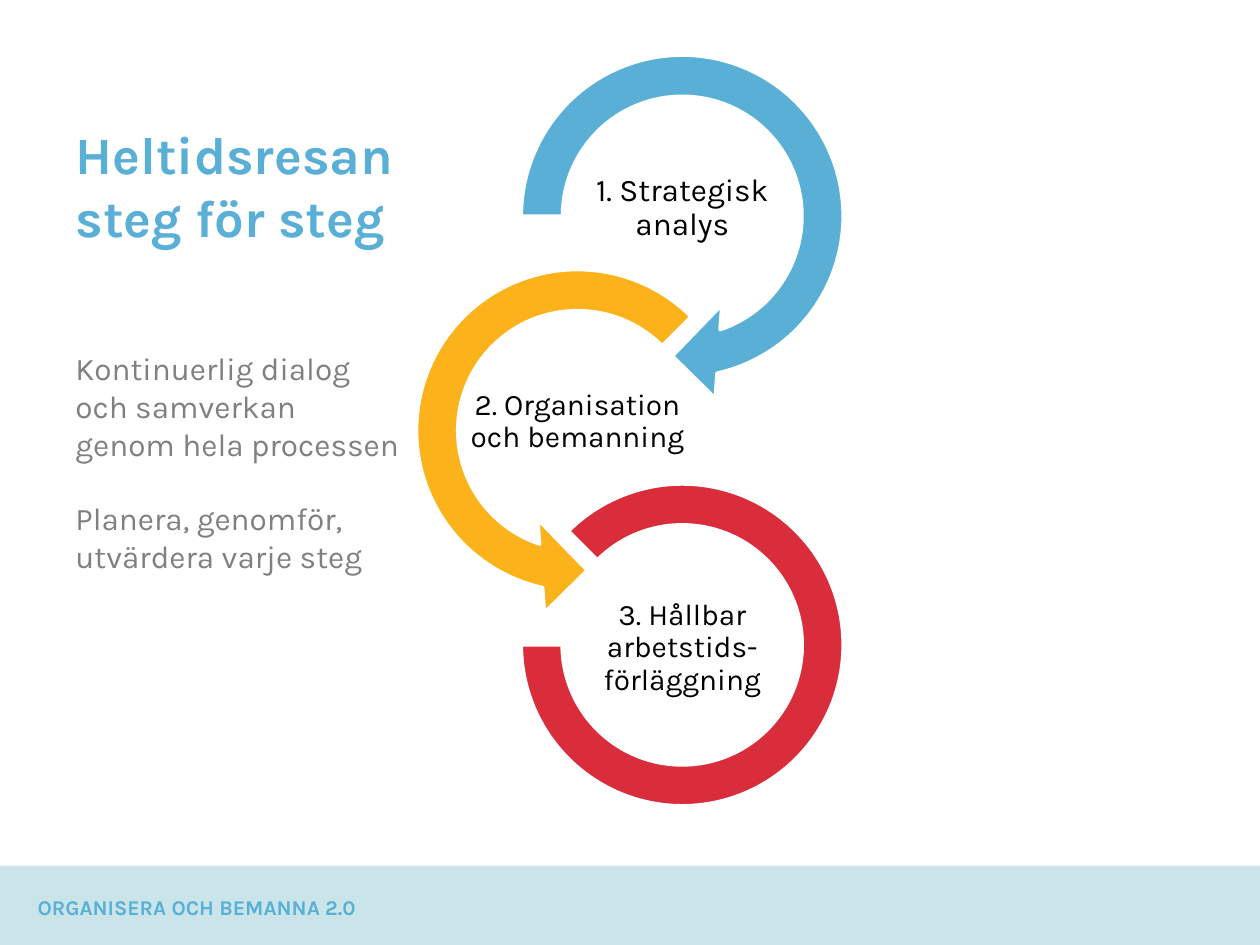
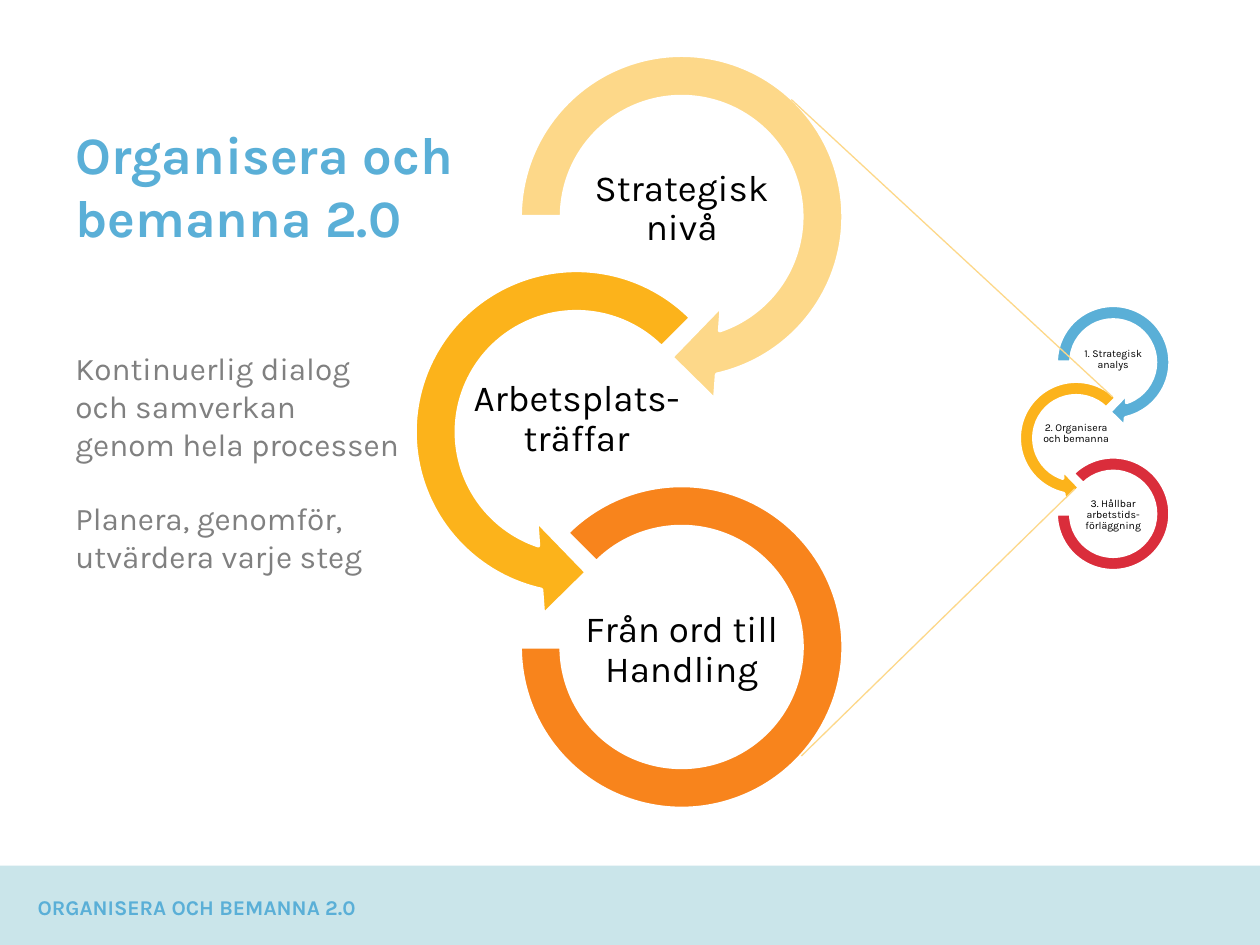
from dataclasses import dataclass

from lxml import etree
from pptx import Presentation
from pptx.dml.color import RGBColor
from pptx.enum.shapes import MSO_CONNECTOR, MSO_SHAPE
from pptx.enum.text import MSO_ANCHOR, PP_ALIGN
from pptx.oxml.ns import qn
from pptx.util import Inches, Pt

RECTANGLE = MSO_SHAPE.RECTANGLE
RIGHT_ARROW = MSO_SHAPE.CIRCULAR_ARROW
LEFT_ARROW = MSO_SHAPE.LEFT_CIRCULAR_ARROW
BLOCK_ARC = MSO_SHAPE.BLOCK_ARC
STRAIGHT = MSO_CONNECTOR.STRAIGHT
TOP, MIDDLE = MSO_ANCHOR.TOP, MSO_ANCHOR.MIDDLE
LEFT, CENTER = PP_ALIGN.LEFT, PP_ALIGN.CENTER

FONT = "Karla"
BLUE, YELLOW, RED = "5AAFD7", "FCB31B", "DA2D3B"
PALE_YELLOW, ORANGE = "FDD889", "F8841C"
PALE_BLUE, GREY, BLACK, WHITE = "CAE5EA", "808080", "000000", "FFFFFF"

FOOTER = "ORGANISERA OCH BEMANNA 2.0"
DIALOGUE = [
    "Kontinuerlig dialog och samverkan",
    "genom hela processen",
    "Planera, genomför, utvärdera varje steg",
]


@dataclass(frozen=True)
class Box:
    left: float
    top: float
    width: float
    height: float

    def lengths(self) -> tuple:
        return tuple(Inches(value) for value in (self.left, self.top, self.width, self.height))


@dataclass(frozen=True)
class TextStyle:
    size: float
    color: str
    bold: bool = False
    align: PP_ALIGN = LEFT
    anchor: MSO_ANCHOR = MIDDLE
    line_spacing: float = 1.0


@dataclass(frozen=True)
class Ring:
    shape: MSO_SHAPE
    adjustments: tuple
    across: float
    down: float
    size: float
    label_center: float
    label_top: float


@dataclass(frozen=True)
class Step:
    text: str
    color: str
    font_size: float
    label_width: float = 0.56
    label_shift: float = 0.0


@dataclass(frozen=True)
class Cycle:
    left: float
    top: float
    diameter: float
    steps: tuple


@dataclass(frozen=True)
class Ray:
    start: tuple
    end: tuple


RINGS = (
    Ring(RIGHT_ARROW, (0.11, 11.42, 45, 108, 0.125), 0, 0, 1, 0.5, 0.34),
    Ring(LEFT_ARROW, (0.11, 11.42, 63, 189, 0.125), -0.28, 0.573, 1, 0.22, 0.9),
    Ring(BLOCK_ARC, (135, 108, 0.127), 0.07, 1.216, 0.86, 0.5, 1.515),
)
LABEL_HEIGHT = 0.28
LABEL_INSET = 0.004

TITLE_STYLE = TextStyle(30, BLUE, bold=True)
FOOTER_STYLE = TextStyle(12, BLUE, bold=True)
BODY_STYLE = TextStyle(18, GREY, anchor=TOP)

JOURNEY = Cycle(3.93, 0.23, 2.97, (
    Step("1. Strategisk analys", BLUE, 18),
    Step("2. Organisation och bemanning", YELLOW, 17, label_width=0.63, label_shift=0.01),
    Step("3. Hållbar arbetstids-förläggning", RED, 17),
))
LEVELS = Cycle(3.92, 0.23, 2.98, (
    Step("Strategisk nivå", PALE_YELLOW, 21),
    Step("Arbetsplats-träffar", YELLOW, 21),
    Step("Från ord till Handling", ORANGE, 21),
))
OVERVIEW = Cycle(8.31, 2.35, 1.05, (
    Step("1. Strategisk analys", BLUE, 6),
    Step("2. Organisera och bemanna", YELLOW, 6),
    Step("3. Hållbar arbetstids-förläggning", RED, 6),
))
RAYS = (Ray((6.28, 0.79), (8.83, 3.15)), Ray((8.53, 3.88), (6.36, 6)))


def rgb(color: str) -> RGBColor:
    return RGBColor.from_string(color)


def add_filled_shape(slide, kind: MSO_SHAPE, box: Box, color: str):
    shape = slide.shapes.add_shape(kind, *box.lengths())
    shape.shadow.inherit = False
    shape.fill.solid()
    shape.fill.fore_color.rgb = rgb(color)
    shape.line.fill.background()
    return shape


def add_text(slide, box: Box, texts: list, style: TextStyle, inset: float | None = None):
    frame = slide.shapes.add_textbox(*box.lengths()).text_frame
    frame.word_wrap = True
    frame.vertical_anchor = style.anchor
    if inset is not None:
        frame.margin_left = frame.margin_right = Inches(inset)
        frame.margin_top = frame.margin_bottom = Inches(inset)
    for index, text in enumerate(texts):
        paragraph = frame.add_paragraph() if index else frame.paragraphs[0]
        paragraph.alignment = style.align
        paragraph.line_spacing = style.line_spacing
        run = paragraph.add_run()
        run.text = text
        run.font.name = FONT
        run.font.size = Pt(style.size)
        run.font.bold = style.bold
        run.font.color.rgb = rgb(style.color)
    return frame


def add_cycle(slide, cycle: Cycle) -> None:
    unit = cycle.diameter
    for ring, step in zip(RINGS, cycle.steps):
        ring_box = Box(cycle.left + ring.across * unit, cycle.top + ring.down * unit,
                       ring.size * unit, ring.size * unit)
        shape = add_filled_shape(slide, ring.shape, ring_box, step.color)
        for index, value in enumerate(ring.adjustments):
            shape.adjustments[index] = value
        shape.line.color.rgb = rgb(WHITE)
        shape.line.width = Pt(2)

        label_box = Box(cycle.left + (ring.label_center - step.label_width / 2) * unit,
                        cycle.top + (ring.label_top + step.label_shift) * unit,
                        step.label_width * unit, LABEL_HEIGHT * unit)
        style = TextStyle(step.font_size, BLACK, align=CENTER, line_spacing=0.9)
        add_text(slide, label_box, [step.text], style, LABEL_INSET * unit)


def add_ray(slide, ray: Ray) -> None:
    ends = [Inches(value) for value in ray.start + ray.end]
    connector = slide.shapes.add_connector(STRAIGHT, *ends)
    connector.line.color.rgb = rgb(PALE_YELLOW)
    connector.line.width = Pt(0.75)
    etree.SubElement(connector._element.spPr, qn("a:effectLst"))


def add_base_slide(presentation, title: str, title_width: float):
    slide = presentation.slides.add_slide(presentation.slide_layouts[6])
    add_filled_shape(slide, RECTANGLE, Box(0, 6.87, 10, 0.63), PALE_BLUE)
    add_text(slide, Box(0.2, 7, 5.7, 0.4), [FOOTER], FOOTER_STYLE)
    add_text(slide, Box(0.5, 0.89, title_width, 1.16), [title], TITLE_STYLE)
    body = add_text(slide, Box(0.5, 2.72, 2.77, 2.52), DIALOGUE, BODY_STYLE)
    body.paragraphs[-1].space_before = Pt(21)
    return slide


def main() -> None:
    presentation = Presentation()
    presentation.slide_width = Inches(10)
    presentation.slide_height = Inches(7.5)

    journey_slide = add_base_slide(presentation, "Heltidsresan steg för steg", 3.24)
    add_cycle(journey_slide, JOURNEY)

    levels_slide = add_base_slide(presentation, "Organisera och bemanna 2.0", 3.41)
    add_cycle(levels_slide, LEVELS)
    add_cycle(levels_slide, OVERVIEW)
    for ray in RAYS:
        add_ray(levels_slide, ray)

    presentation.save("out.pptx")


if __name__ == "__main__":
    main()
